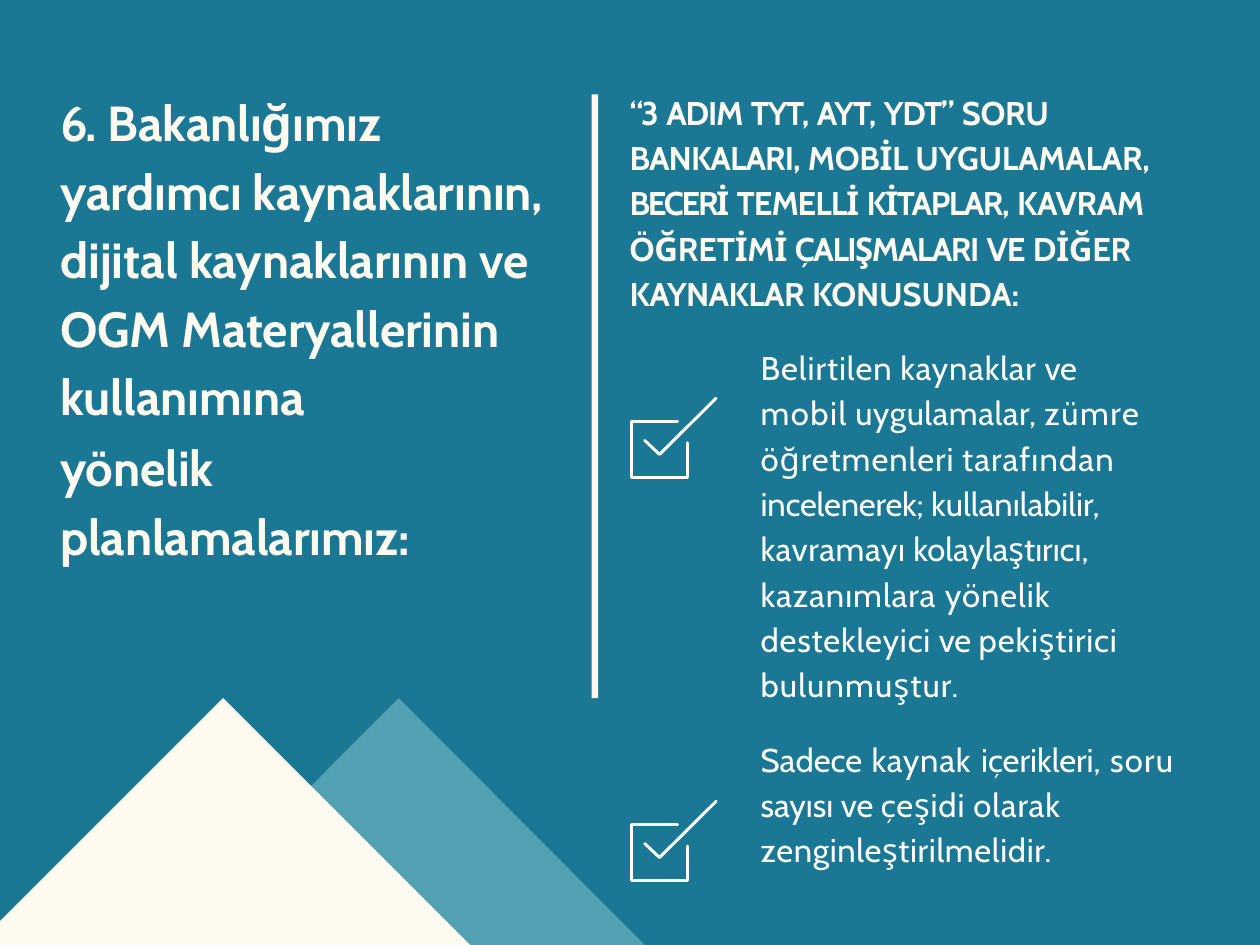
from lxml import etree
from pptx import Presentation
from pptx.dml.color import RGBColor
from pptx.enum import text
from pptx.oxml import ns
from pptx.util import Pt

COLORS = {"teal": "1B7894", "cream": "FFFAF0", "ice": "D0FEFF", "white": "FFFFFF"}
rgb = {name: RGBColor.from_string(value) for name, value in COLORS.items()}


def add_outline(contours, closed=True):
    """Draw one shape from polygons or open lines given in points."""
    contours = [[(Pt(x), Pt(y)) for x, y in c] for c in contours]
    fb = s.shapes.build_freeform(*contours[0][0], scale=1.0)
    for i, pts in enumerate(contours):
        if i:
            fb.move_to(*pts[0])
        fb.add_line_segments(pts[1:], close=closed)
    sp = fb.convert_to_shape()
    sp.shadow.inherit = False
    return sp


def fill_text(sp, box, size, paragraphs):
    """Place a placeholder and write its paragraphs run by run."""
    sp.left, sp.top, sp.width, sp.height = [Pt(v) for v in box]
    tf = sp.text_frame
    tf.word_wrap = True
    tf.auto_size = text.MSO_AUTO_SIZE.NONE
    tf.vertical_anchor = text.MSO_ANCHOR.TOP
    tf.margin_left = tf.margin_right = tf.margin_bottom = 0
    tf.margin_top = Pt(1)
    for i, (indent, spacing, before, color, bold, runs) in enumerate(paragraphs):
        p = tf.add_paragraph() if i else tf.paragraphs[0]
        p.alignment = text.PP_ALIGN.LEFT
        p.line_spacing, p.space_before, p.space_after = spacing, Pt(before), Pt(0)
        pPr = p._p.get_or_add_pPr()
        pPr.set("marL", str(Pt(indent)))
        pPr.set("indent", "0")
        etree.SubElement(pPr, ns.qn("a:buNone"))
        for words, tracking in runs:
            if words == "\n":
                p.add_line_break()
                continue
            # The space that ends a run keeps its normal width
            parts = [(words, tracking)]
            if words.strip() and words.endswith(" "):
                parts = [(words.rstrip(), tracking), (" ", 0)]
            for part, spc in parts:
                r = p.add_run()
                r.text = part
                r.font.name, r.font.size, r.font.bold = "Cabin", Pt(size), bold
                r.font.color.rgb = rgb[color]
                r._r.get_or_add_rPr().set("spc", str(round(spc * 100)))


prs = Presentation()
prs.slide_width, prs.slide_height = Pt(768), Pt(576)
s = prs.slides.add_slide(prs.slide_layouts[1])

# Backdrop, rear mountain, front mountain with the column divider
backdrop = [(0, 0), (768, 0), (768, 576), (0, 576)]
rear = [(93, 576), (243, 425.5), (393, 576)]
front = [(286.5, 576), (136, 425.5), (0, 561.5), (0, 576)]
divider = [(364.5, 57.6), (360.7, 57.6), (360.7, 425.6), (364.5, 425.6)]
for contours, color in (([backdrop], "teal"), ([rear], "ice"), ([front, divider], "cream")):
    sp = add_outline(contours)
    sp.fill.solid()
    sp.fill.fore_color.rgb = rgb[color]
    sp.line.fill.background()
    if color == "ice":
        srgb = sp._element.spPr.find(".//" + ns.qn("a:srgbClr"))
        etree.SubElement(srgb, ns.qn("a:alpha"), val="30000")
    if color == "teal":
        s.shapes._spTree.insert(2, sp._element)

# Checkbox icons
box = [(29, 15), (1, 15), (1, 49), (35, 49), (35, 28)]
tick = [(9, 26.5), (18, 35), (52.5, 0.7)]
for top in (242, 487.7):
    sp = add_outline([[(384 + x, top + y) for x, y in c] for c in (box, tick)], closed=False)
    sp.fill.background()
    sp.line.color.rgb = rgb["white"]
    sp.line.width = Pt(1.8)
    ln = sp.line._get_or_add_ln()
    ln.set("cap", "rnd")
    etree.SubElement(ln, ns.qn("a:round"))

# Title: indent, line spacing, space before, colour, bold, (text, tracking) runs
fill_text(s.shapes.title, (36, 49.7, 305.3, 380), 30, [
    (0.7, 1.16, 0.9, "cream", True, [
        ("6. ", -1.5), ("Bakanlığımız yardımcı kaynaklarının, ", -0.1),
        ("dijital ", 0), ("kaynaklarının ", -0.1), ("ve ", 0), ("OGM ", -0.2),
        ("Materyallerinin kullanımına", -0.1)]),
    (0.7, Pt(42), 1, "cream", True, [("yönelik planlamalarımız:", -0.1)]),
])

# Heading and checklist
fill_text(s.placeholders[1], (383, 51.8, 355, 509), 20, [
    (0.7, 1.15, 1, "cream", True, [
        ("“3 ", -1.3), ("ADIM ", -0.7), ("TYT, ", -0.8), ("AYT, ", -0.6),
        ("YDT” ", -0.8), ("SORU ", -0.2), ("BANKALARI, ", -0.6),
        ("MOBİL UYGULAMALAR, ", -0.2), ("BECERİ ", -1.4), ("TEMELLİ ", -0.6),
        ("KİTAPLAR, ", -0.9), ("KAVRAM ", -0.3), ("ÖĞRETİMİ ", -0.1),
        ("ÇALIŞMALARI ", -0.9), ("VE ", -0.8), ("DİĞER ", -0.2),
        ("KAYNAKLAR ", -0.4), ("KONUSUNDA:", -0.1)]),
    (80.6, 1.15, 17.6, "white", False, [
        ("Belirtilen ", 0.6), ("kaynaklar ", 0.5), ("ve", -0.2), ("\n", 0),
        ("mobil ", 0.9), ("uygulamalar, ", 0.3), ("zümre ", 0.9),
        ("öğretmenleri ", 0.6), ("tarafından ", 0.7), ("incelenerek; ", -0.1),
        ("kullanılabilir, ", 0), ("kavramayı ", 0.4), ("kolaylaştırıcı, ", 0),
        ("kazanımlara yönelik ", 0.6), ("destekleyici ", 0.5), ("ve ", -0.2),
        ("pekiştirici ", 0.5), ("bulunmuştur.", 0.7)]),
    (80.6, 1.15, 17.8, "white", False, [
        ("Sadece", 0), (" ", 1.2), ("kaynak", 0.5), (" ", 1.2), ("içerikleri,", 0),
        (" ", 1.2), ("soru ", 0.7), ("sayısı ve ", 0), ("çeşidi olarak ", 0.5),
        ("zenginleştirilmelidir.", 0.4)]),
])

prs.save("out.pptx")
